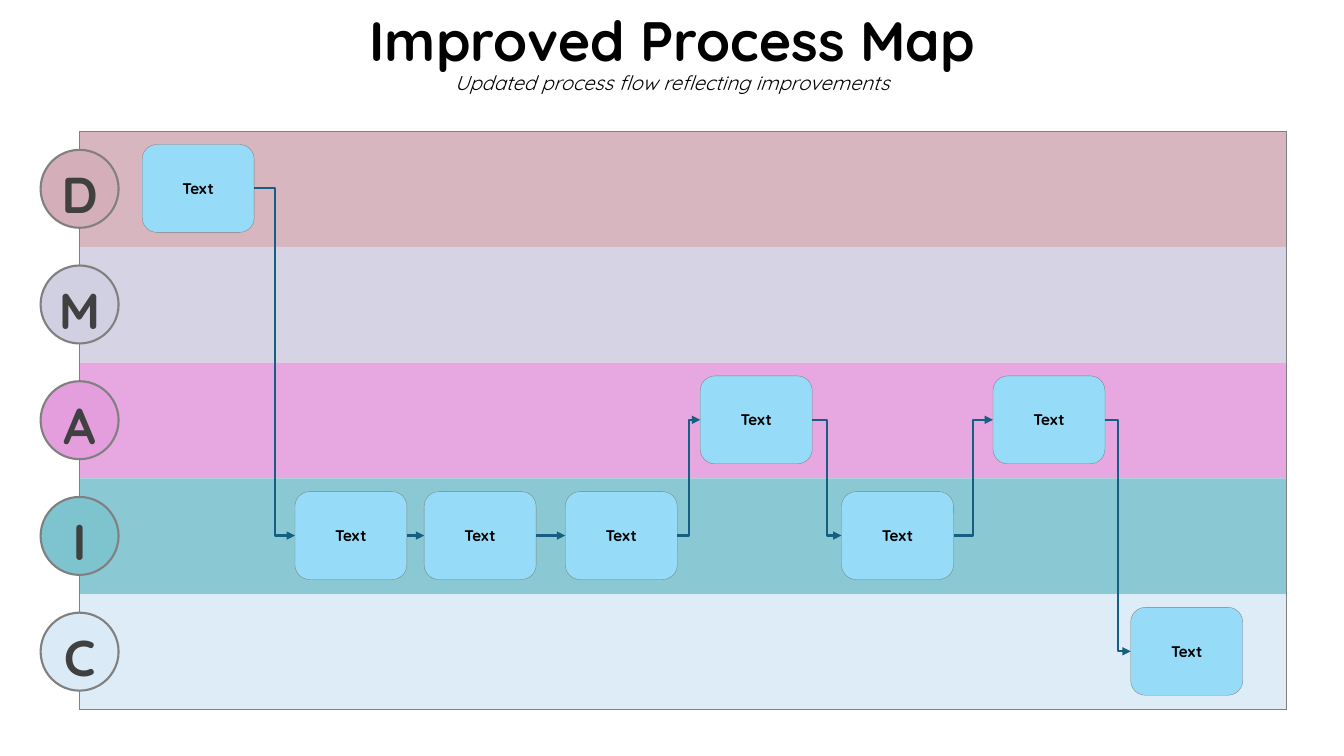
"""Build the Improved Process Map slide with its five DMAIC lanes."""
import itertools

import lxml.etree
import pptx
import pptx.dml.color
import pptx.enum.shapes
import pptx.enum.text
import pptx.oxml.ns
import pptx.util

Pt = pptx.util.Pt
SHAPE = pptx.enum.shapes.MSO_SHAPE
CONNECTOR = pptx.enum.shapes.MSO_CONNECTOR
MIDDLE = pptx.enum.text.MSO_ANCHOR.MIDDLE
qn = pptx.oxml.ns.qn


def color(hex_code):
    return pptx.dml.color.RGBColor.from_string(hex_code)


def write(paragraph, text, size, ink="000000", bold=True, italic=False, spacing=1.0):
    paragraph.alignment = pptx.enum.text.PP_ALIGN.CENTER
    paragraph.line_spacing = spacing
    run = paragraph.add_run()
    run.text = text
    run.font.name = "Quicksand"
    run.font.size = Pt(size)
    run.font.bold = bold
    run.font.italic = italic
    run.font.color.rgb = color(ink)


deck = pptx.Presentation()
deck.slide_width, deck.slide_height = Pt(960), Pt(540)
slide = deck.slides.add_slide(deck.slide_layouts[6])
shapes = slide.shapes

heading = shapes.add_textbox(Pt(235.4), Pt(0), Pt(489.6), Pt(77.8)).text_frame
heading.word_wrap = True
heading.vertical_anchor = MIDDLE
title = heading.paragraphs[0]
write(title, "Improved Process Map", 39.6, spacing=0.9)
title.add_line_break()
write(title, "Updated process flow reflecting improvements", 14.4,
      bold=False, italic=True, spacing=0.9)

phases = [("D", "D4AFB9"), ("M", "D1CFE2"), ("A", "E59EDD"),
          ("I", "7EC4CF"), ("C", "DAEAF6")]
lane_height = 82.65
lanes = shapes.add_table(len(phases), 1, Pt(56.9), Pt(93.8), Pt(862),
                         Pt(lane_height * len(phases))).table
lanes.first_row = False
lanes.horz_banding = False

for lane, (letter, tint) in enumerate(phases):
    lanes.rows[lane].height = Pt(lane_height)
    cell = lanes.cell(lane, 0)
    properties = cell._tc.get_or_add_tcPr()
    edges = {"lnL": True, "lnR": True, "lnT": lane == 0, "lnB": lane == len(phases) - 1}
    for edge, visible in edges.items():
        border = lxml.etree.SubElement(properties, qn(f"a:{edge}"), w=str(Pt(1)))
        if visible:
            stroke = lxml.etree.SubElement(border, qn("a:solidFill"))
            lxml.etree.SubElement(stroke, qn("a:srgbClr"), val="808080")
        else:
            lxml.etree.SubElement(border, qn("a:noFill"))
    cell.fill.solid()
    cell.fill.fore_color.rgb = color(tint)
    tint_element = properties.find(qn("a:solidFill")).find(qn("a:srgbClr"))
    lxml.etree.SubElement(tint_element, qn("a:alpha"), val="90000")

    badge = shapes.add_shape(SHAPE.OVAL, Pt(29), Pt(107 + lane * lane_height),
                             Pt(55.7), Pt(55.7))
    badge.shadow.inherit = False
    badge.fill.solid()
    badge.fill.fore_color.rgb = color(tint)
    badge.line.color.rgb = color("808080")
    badge.line.width = Pt(1.5)
    frame = badge.text_frame
    frame.margin_left = frame.margin_right = frame.margin_top = frame.margin_bottom = 0
    frame.vertical_anchor = MIDDLE
    write(frame.paragraphs[0], letter, 36, ink="404040", spacing=1.15)

step_positions = [(101.6, 0), (210.7, 3), (303, 3), (403.8, 3),
                  (500.2, 2), (601.1, 3), (709.3, 2), (807.7, 4)]
steps = []
for left, lane in step_positions:
    step = shapes.add_shape(SHAPE.ROUNDED_RECTANGLE, Pt(left),
                            Pt(103.2 + lane * lane_height), Pt(80), Pt(62.8))
    step.shadow.inherit = False
    step.fill.solid()
    step.fill.fore_color.rgb = color("96DCF8")
    step.line.color.rgb = color("808080")
    step.line.width = Pt(0.25)
    step.text_frame.vertical_anchor = MIDDLE
    write(step.text_frame.paragraphs[0], "Text", 11)
    steps.append(step)

for before, after in itertools.pairwise(steps):
    kind = CONNECTOR.STRAIGHT if before.top == after.top else CONNECTOR.ELBOW
    flow = shapes.add_connector(kind, before.left + before.width,
                                before.top + before.height // 2,
                                after.left, after.top + after.height // 2)
    flow.begin_connect(before, 3)
    flow.end_connect(after, 1)
    flow.line.color.rgb = color("156082")
    flow.line.width = Pt(1.5)
    lxml.etree.SubElement(flow.line._get_or_add_ln(), qn("a:tailEnd"), type="triangle")
    lxml.etree.SubElement(flow._element.spPr, qn("a:effectLst"))

deck.save("out.pptx")
